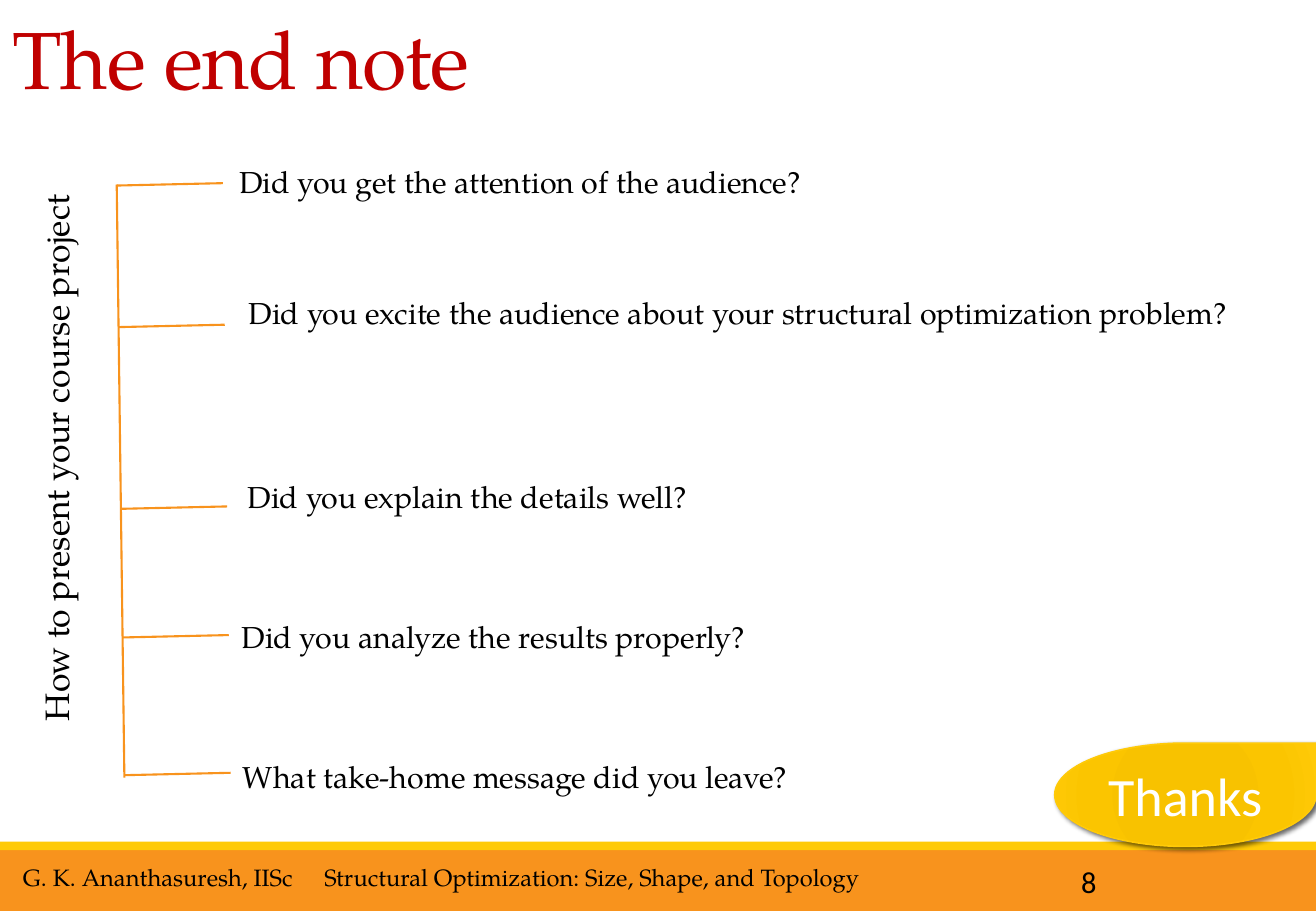
"""Build the closing slide of a talk on presenting a course project."""
from pptx import Presentation
from pptx.dml.color import RGBColor as Color
from pptx.enum.shapes import MSO_CONNECTOR as Connector, MSO_SHAPE as Shape
from pptx.enum.text import MSO_ANCHOR as Anchor, MSO_AUTO_SIZE as AutoSize, PP_ALIGN as Align
from pptx.oxml import parse_xml
from pptx.oxml.ns import nsdecls, qn
from pptx.util import Cm, Pt

COLORS = {
    "title": "C00000",
    "text": "000000",
    "white": "FFFFFF",
    "orange": "F8931D",
    "yellow": "FFCA08",
    "amber": "F5C000",
    "gold": "F8C200",
    "sun": "FBC500",
}
SERIF, SANS = "TeX Gyre Pagella", "Calibri"


def write_text(box, text, size=18, font=SERIF, color="text", align=Align.LEFT,
               anchor=Anchor.TOP, wrap=True):
    """Put one formatted line of text in a shape and return its run."""
    frame = box.text_frame
    frame.word_wrap = wrap
    frame.auto_size = AutoSize.NONE
    frame.vertical_anchor = anchor
    para = frame.paragraphs[0]
    para.alignment = align
    span = para.add_run()
    span.text = text
    span.font.size = Pt(size)
    span.font.name = font
    span.font.color.rgb = Color.from_string(COLORS[color])
    return span


deck = Presentation()
deck.slide_width, deck.slide_height = Cm(27.51), Cm(19.05)
page = deck.slides.add_slide(deck.slide_layouts[5])
shapes = page.shapes

for top, height, color in [(17.78, 1.27, "orange"), (17.6, 0.18, "yellow")]:
    band = shapes.add_shape(Shape.RECTANGLE, 0, Cm(top), deck.slide_width, Cm(height))
    band.shadow.inherit = False
    band.fill.solid()
    band.fill.fore_color.rgb = Color.from_string(COLORS[color])
    band.line.fill.background()

title = shapes.title
title.left, title.top, title.width, title.height = 0, 0, deck.slide_width, Cm(2.34)
title_span = write_text(title, "The end note", size=48, color="title", anchor=Anchor.BOTTOM)
title_span.font._element.set("spc", "-50")
title.text_frame.paragraphs[0].line_spacing = 0.85

footers = [
    ("G. K. Ananthasuresh, IISc", 0.23, 17.91, 6.17, {"size": 14, "wrap": False}),
    ("Structural Optimization: Size, Shape, and Topology", 6.53, 17.93, 11.84,
     {"size": 14, "wrap": False}),
    ("8", 22.35, 17.93, 2.95, {"font": SANS}),
]
for text, left, top, width, style in footers:
    box = shapes.add_textbox(Cm(left), Cm(top), Cm(width), Cm(0.9))
    write_text(box, text, **style)

topic = shapes.add_textbox(Cm(-6.38), Cm(9.02), Cm(15.11), Cm(1.11))
topic.rotation = 270
write_text(topic, "How to present your course project", size=20, align=Align.CENTER)

questions = [
    ("Did you get the attention of the audience?", 4.75, 3.28, 3.88),
    ("Did you excite the audience about your structural optimization problem?",
     4.95, 6.02, 6.84),
    ("Did you explain the details well?", 4.93, 9.88, 10.64),
    ("Did you analyze the results properly?", 4.8, 12.8, 13.33),
    ("What take-home message did you leave?", 4.83, 15.72, 16.21),
]
spine_left, spine_top, spine_right, spine_bottom = 2.44, 3.86, 2.6, 16.26
slant = (spine_right - spine_left) / (spine_bottom - spine_top)
lines = [(spine_left, spine_top, spine_right, spine_bottom)]
for question, left, top, branch_top in questions:
    box = shapes.add_textbox(Cm(left), Cm(top), Cm(22.05), Cm(1.02))
    write_text(box, question)
    branch_left = spine_left + slant * (branch_top - spine_top)
    lines.append((branch_left, branch_top, branch_left + 2.22, branch_top - 0.05))

for ends in lines:
    line = shapes.add_connector(Connector.STRAIGHT, *(Cm(end) for end in ends))
    line.line.color.rgb = Color.from_string(COLORS["orange"])
    line.line.width = Pt(1.25)
    line._element.spPr.append(parse_xml(f"<a:effectLst {nsdecls('a')}/>"))

thanks = shapes.add_shape(Shape.TEAR, Cm(22.05), Cm(15.54), Cm(5.46), Cm(2.16))
thanks.shadow.inherit = False
thanks.line.color.rgb = Color.from_string(COLORS["yellow"])
thanks.line.width = Pt(1)
write_text(thanks, "Thanks", size=32, font=SANS, color="white",
           align=Align.CENTER, anchor=Anchor.MIDDLE)
stops = "".join(
    f'<a:gs pos="{position}000"><a:srgbClr val="{COLORS[color]}"/></a:gs>'
    for position, color in [(0, "amber"), (34, "gold"), (70, "sun"), (100, "yellow")]
)
properties = thanks._element.spPr
properties.insert(2, parse_xml(
    f'<a:gradFill {nsdecls("a")} rotWithShape="1"><a:gsLst>{stops}</a:gsLst>'
    '<a:path path="circle"><a:fillToRect l="100000" t="100000" r="100000" b="100000"/>'
    '</a:path></a:gradFill>'
))
properties.find(qn("a:effectLst")).append(parse_xml(
    f'<a:outerShdw {nsdecls("a")} blurRad="{Pt(3)}" dist="{Pt(2)}" dir="2700000"'
    ' algn="tl" rotWithShape="0"><a:srgbClr val="000000"><a:alpha val="60000"/>'
    '</a:srgbClr></a:outerShdw>'
))

deck.save("out.pptx")
